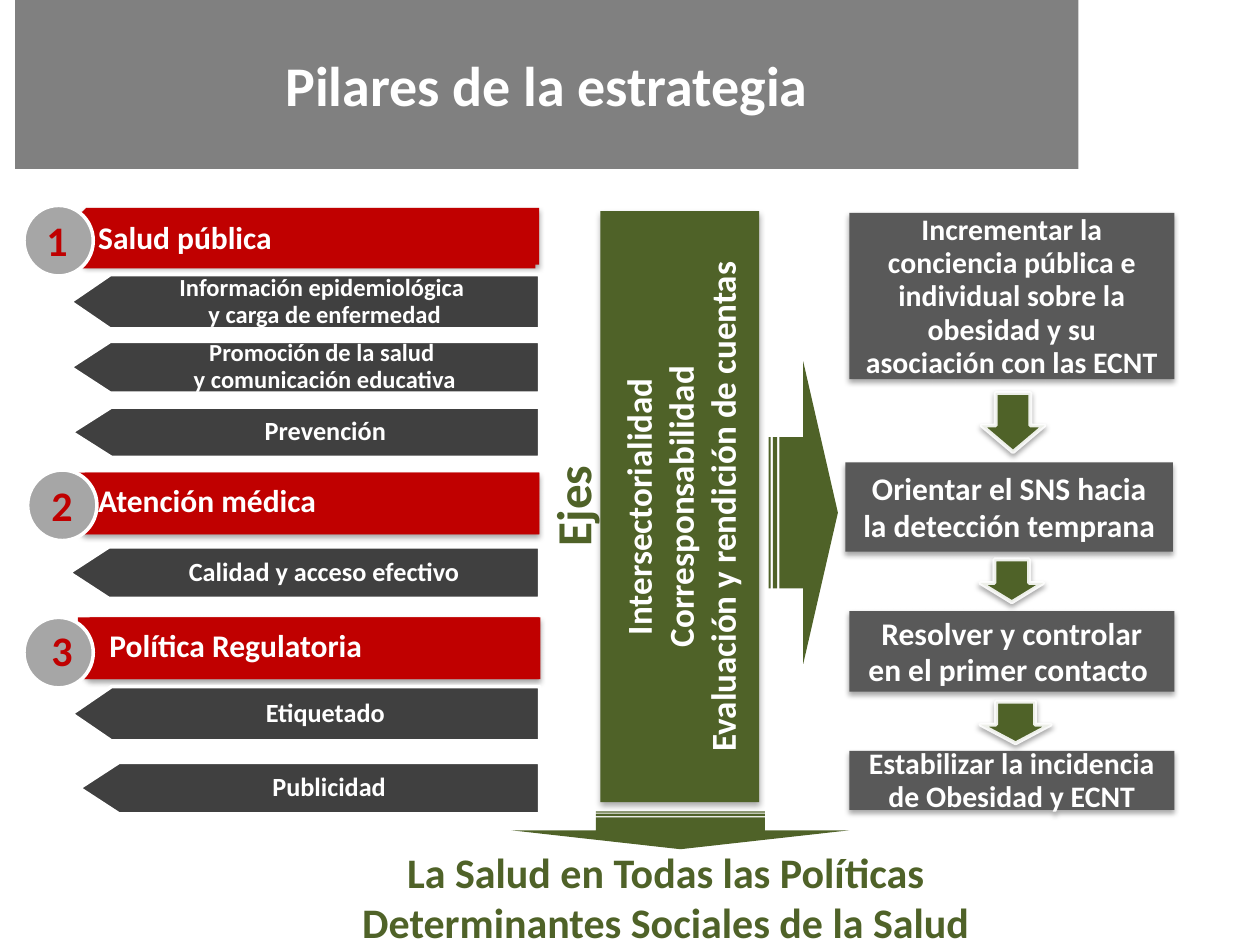
from dataclasses import dataclass
from typing import NamedTuple

from lxml import etree
from pptx import Presentation
from pptx.dml.color import RGBColor
from pptx.enum import shapes as sh, text as tx
from pptx.oxml import ns
from pptx.util import Pt


@dataclass(frozen=True)
class Theme:
    font: str = "Calibri"
    white: str = "FFFFFF"
    black: str = "000000"
    green: str = "4F6228"
    red: str = "C00000"
    goal: str = "595959"
    tag: str = "404040"
    disc: str = "A6A6A6"
    head: str = "808080"
    title: int = 32
    axis: int = 28
    big: int = 24
    mid: int = 20
    band: int = 18


class Box(NamedTuple):
    x: float
    y: float
    w: float
    h: float
    rot: float = 0


class Goal(NamedTuple):
    box: Box
    label: str
    size: int
    pitch: int


class Band(NamedTuple):
    label: str
    plate: Box
    face: Box
    disc: tuple
    digit: tuple
    inset: float


class Tag(NamedTuple):
    lines: list
    x: float
    y: float
    h: float
    size: int


T = Theme()
KIND = sh.MSO_SHAPE
MID = tx.PP_ALIGN.CENTER
EDGE, TIP = 308.4, 22.7

GOALS = [
    Goal(Box(485.3, 121.7, 185.8, 95), "Incrementar la conciencia pública e individual "
         "sobre la obesidad y su asociación con las ECNT", 17, 19),
    Goal(Box(483.1, 264.2, 187.2, 51.1), "Orientar el SNS hacia la detección temprana", 18, 21),
    Goal(Box(485.3, 349.2, 185.8, 46.1), "Resolver y controlar en el primer contacto ", 18, 21),
    Goal(Box(485.3, 429.1, 185.8, 33.8), "Estabilizar la incidencia de Obesidad y ECNT", 17, 19),
]
STEPS = [Box(560.9, 224.6, 36, 33.8), Box(560.2, 319.7, 36, 24.5), Box(560.2, 401, 40.3, 23.8)]
BANDS = [
    Band("Salud pública", Box(33.1, 118.8, 275, 32.4, 180), Box(40.3, 121, 265.7, 32.4),
         (13.7, 117.4), (19.4, 118.8), 15.8),
    Band("Atención médica", Box(31, 270, 277.2, 35.3, 180), Box(40.3, 270, 267.8, 35.3),
         (15.8, 268.6), (22.3, 270.7), 15.8),
    Band("Política Regulatoria", Box(33.8, 352.8, 275, 35.3, 180), Box(44.6, 352.8, 263.5, 35.3),
         (13.7, 352.8), (22.3, 353.5), 18),
]
TAGS = [
    Tag(["Información epidemiológica ", "y carga de enfermedad"], 40.3, 157, 31, 14),
    Tag(["Promoción de la salud ", "y comunicación educativa"], 40.3, 195.1, 29.5, 14),
    Tag(["Prevención"], 41, 232.6, 28.8, 15),
    Tag(["Calidad y acceso efectivo"], 39.6, 312.5, 29.5, 15),
    Tag(["Etiquetado"], 41, 392.4, 31, 15),
    Tag(["Publicidad"], 45.4, 435.6, 29.5, 15),
]


def paint(shape, fill: str, line: str = "", width: float = 2) -> None:
    shape.shadow.inherit = False
    shape.fill.solid()
    shape.fill.fore_color.rgb = RGBColor.from_string(fill)
    if line:
        shape.line.color.rgb = RGBColor.from_string(line)
        shape.line.width = Pt(width)
    else:
        shape.line.fill.background()


def shade(shape, alpha: int = 35, blur: float = 3.1, dist: float = 1.8) -> None:
    """Cast a soft shadow straight down."""
    list_ = shape._element.spPr.find(ns.qn("a:effectLst"))
    cast = etree.SubElement(list_, ns.qn("a:outerShdw"), blurRad=str(Pt(blur)),
                            dist=str(Pt(dist)), dir="5400000", rotWithShape="0")
    tint = etree.SubElement(cast, ns.qn("a:srgbClr"), val=T.black)
    etree.SubElement(tint, ns.qn("a:alpha"), val=str(alpha * 1000))


def draw(slide, kind, box: Box, fill: str, line: str = "", width: float = 2):
    shape = slide.shapes.add_shape(kind, *map(Pt, box[:4]))
    shape.rotation = box.rot
    paint(shape, fill, line, width)
    return shape


def write(shape, paras: list, size: int, color: str, align=MID, pitch=None,
          pads: tuple = (7.2, 3.6, 7.2, 3.6), wrap: bool = True) -> None:
    """Fill a frame; each paragraph is a list of lines."""
    frame = shape.text_frame
    frame.word_wrap = wrap
    frame.vertical_anchor = tx.MSO_ANCHOR.MIDDLE
    (frame.margin_left, frame.margin_top,
     frame.margin_right, frame.margin_bottom) = map(Pt, pads)
    for i, lines in enumerate(paras):
        para = frame.add_paragraph() if i else frame.paragraphs[0]
        para.alignment = align
        if pitch:
            para.line_spacing = pitch
        for j, line in enumerate(lines):
            if j:
                para.add_line_break()
            run = para.add_run()
            run.text = line
            run.font.name, run.font.size, run.font.bold = T.font, Pt(size), True
            run.font.color.rgb = RGBColor.from_string(color)


def label(slide, box: Box, paras: list, size: int, color: str, align=MID, wrap=True) -> None:
    shape = slide.shapes.add_textbox(*map(Pt, box[:4]))
    shape.rotation = box.rot
    write(shape, paras, size, color, align, wrap=wrap)
    shape.text_frame.vertical_anchor = tx.MSO_ANCHOR.TOP
    shape.text_frame.auto_size = tx.MSO_AUTO_SIZE.SHAPE_TO_FIT_TEXT


def draw_goal(slide, goal: Goal) -> None:
    shape = draw(slide, KIND.RECTANGLE, goal.box, T.goal)
    shade(shape)
    write(shape, [[goal.label]], goal.size, T.white, pitch=Pt(goal.pitch))


def draw_step(slide, box: Box) -> None:
    shape = draw(slide, KIND.DOWN_ARROW, box, T.green, T.white, 2.25)
    shape.adjustments[0], shape.adjustments[1] = 0.55, 0.45
    tint = shape._element.spPr.find(".//" + ns.qn("a:ln")).find(".//" + ns.qn("a:srgbClr"))
    etree.SubElement(tint, ns.qn("a:alpha"), val="90000")
    shade(shape)


def draw_band(slide, band: Band) -> None:
    shade(draw(slide, KIND.PENTAGON, band.plate, T.red))
    face = draw(slide, KIND.RECTANGLE, band.face, T.red)
    write(face, [[band.label]], T.band, T.white, tx.PP_ALIGN.LEFT, Pt(18),
          (band.inset, 5, 10, 5))


def draw_tag(slide, tag: Tag) -> None:
    neck, low = tag.x + TIP, tag.y + tag.h
    spots = [(neck, low), (tag.x, tag.y + tag.h / 2), (neck, tag.y), (EDGE, tag.y)]
    path = slide.shapes.build_freeform(Pt(EDGE), Pt(low))
    path.add_line_segments([(Pt(x), Pt(y)) for x, y in spots], close=True)
    shape = path.convert_to_shape()
    paint(shape, T.tag, T.white)
    write(shape, [tag.lines], tag.size, T.white, pitch=0.9, pads=(31, 4.3, 8.6, 4.3))


def main() -> None:
    deck = Presentation()
    deck.slide_width, deck.slide_height = Pt(720), Pt(540)
    slide = deck.slides.add_slide(deck.slide_layouts[5])

    title = slide.shapes.title
    title.left, title.top, title.width, title.height = map(Pt, (8.6, 0, 607.7, 96.5))
    title.fill.solid()
    title.fill.fore_color.rgb = RGBColor.from_string(T.head)
    write(title, [["Pilares de la estrategia"]], T.title, T.white)

    label(slide, Box(222.5, 268.6, 208.8, 41, 270), [["Ejes"]], T.axis, T.green)
    draw(slide, KIND.STRIPED_RIGHT_ARROW, Box(439.2, 206.6, 39.6, 172.8), T.green)
    for goal in GOALS:
        draw_goal(slide, goal)
    for step in STEPS:
        draw_step(slide, step)

    draw(slide, KIND.STRIPED_RIGHT_ARROW, Box(378, 378, 21.6, 193, 90), T.green)
    label(slide, Box(90, 480.2, 581, 65.5),
          [["La Salud en Todas las Políticas"], ["Determinantes Sociales de la Salud"]],
          T.big, T.green)

    for band in BANDS:
        draw_band(slide, band)
    for tag in TAGS:
        draw_tag(slide, tag)
    for i, band in enumerate(BANDS, 1):
        draw(slide, KIND.OVAL, Box(*band.disc, 39.6, 40.3), T.disc, T.white)
        label(slide, Box(*band.digit, 26.6, 36), [[str(i)]], T.big, T.red,
              tx.PP_ALIGN.LEFT, False)

    axes = draw(slide, KIND.RECTANGLE, Box(219.6, 244.1, 337.7, 90.7, 270), T.green)
    shade(axes, 32, 3.5, 2.2)
    write(axes, [["Intersectorialidad"], ["Corresponsabilidad"],
                 ["Evaluación y rendición de cuentas"]], T.mid, T.white)
    deck.save("out.pptx")


if __name__ == "__main__":
    main()
